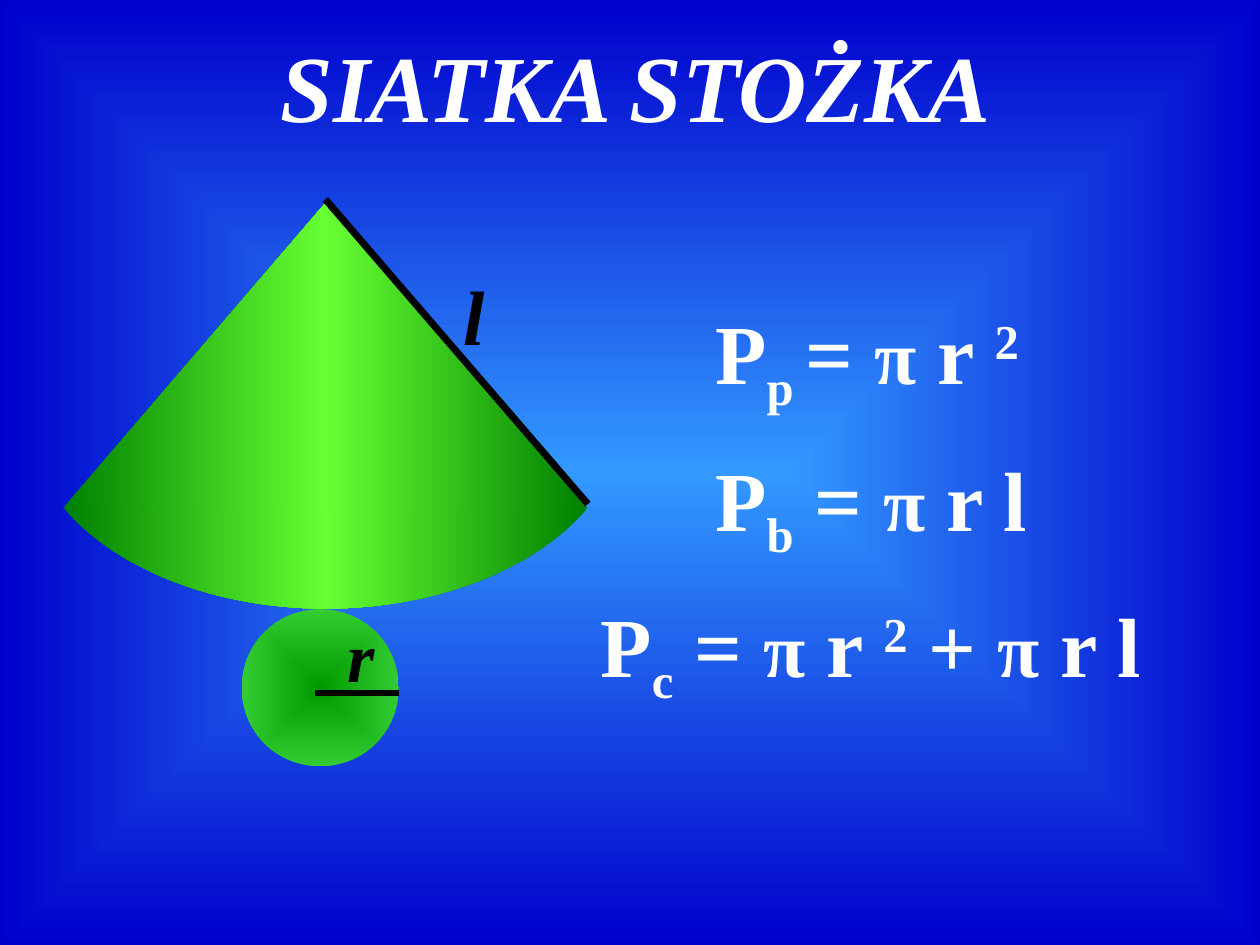
"""Build the slide with the net of a cone and its area formulas."""
import pptx
import pptx.dml.color
import pptx.enum.shapes
import pptx.enum.text
import pptx.oxml
import pptx.oxml.ns
import pptx.util

Cm, Pt = pptx.util.Cm, pptx.util.Pt
rgb = pptx.dml.color.RGBColor.from_string
MSO_SHAPE = pptx.enum.shapes.MSO_SHAPE
LINEAR = '<a:lin ang="0" scaled="1"/>'
CENTRED = '<a:path path="shape"><a:fillToRect l="50000" t="50000" r="50000" b="50000"/></a:path>'
CONE = [(0, "008000"), (50, "66FF33"), (100, "008000")]


def set_gradient(fill, element, stops, direction):
    """Give a fill the colour stops and the direction."""
    fill.gradient()
    old = element.find(".//" + pptx.oxml.ns.qn("a:gradFill"))
    gs = "".join(f'<a:gs pos="{pos * 1000}"><a:srgbClr val="{c}"/></a:gs>' for pos, c in stops)
    new = pptx.oxml.parse_xml(
        f'<a:gradFill {pptx.oxml.ns.nsdecls("a")} rotWithShape="1">'
        f"<a:gsLst>{gs}</a:gsLst>{direction}</a:gradFill>")
    old.getparent().replace(old, new)


def write_runs(sp, runs, color, italic, wrap=True):
    """Write (text, size, baseline percent) runs into a shape."""
    tf = sp.text_frame
    tf.word_wrap = wrap
    tf.auto_size = pptx.enum.text.MSO_AUTO_SIZE.SHAPE_TO_FIT_TEXT
    tf.vertical_anchor = pptx.enum.text.MSO_ANCHOR.TOP
    p = tf.paragraphs[0]
    p.alignment = pptx.enum.text.PP_ALIGN.LEFT
    for text, size, baseline in runs:
        r = p.add_run()
        r.text = text
        r.font.name = "Times New Roman"
        r.font.size = Pt(size)
        r.font.bold = True
        r.font.italic = italic
        r.font.color.rgb = rgb(color)
        if baseline:
            r.font._element.set("baseline", str(baseline * 1000))


prs = pptx.Presentation()
prs.slide_width, prs.slide_height = Cm(25.4), Cm(19.05)
s = prs.slides.add_slide(prs.slide_layouts[5])
set_gradient(s.background.fill, s.element, [(0, "3399FF"), (100, "0000CC")], CENTRED)

title = s.shapes.title
title.left, title.top, title.width, title.height = Cm(5.4), Cm(0.43), Cm(15.56), Cm(2.54)
write_runs(title, [("SIATKA STOŻKA", 54, 0)], "FFFFFF", True)
title.text_frame.paragraphs[0].space_before = Pt(6)
title.text_frame.paragraphs[0].line_spacing = 1.0

base = s.shapes.add_shape(MSO_SHAPE.OVAL, Cm(4.87), Cm(12.28), Cm(3.17), Cm(3.17))
set_gradient(base.fill, base.element, [(0, "009900"), (100, "33CC33")], CENTRED)

curves = [
    [(8.61, 8.97), (8.18, 9.45), (7.39, 9.75), (6.56, 9.75)],
    [(6.56, 9.75), (5.73, 9.75), (4.94, 9.45), (4.51, 8.97)],
    [(1.3, 10.26), (2.39, 11.51), (4.39, 12.27), (6.56, 12.27)],
    [(6.56, 12.27), (8.73, 12.27), (10.74, 11.51), (11.83, 10.26)],
]
steps = 24
points = []
for curve in curves:
    for i in range(steps + 1):
        t = i / steps
        weights = [(1 - t) ** 3, 3 * t * (1 - t) ** 2, 3 * t ** 2 * (1 - t), t ** 3]
        points.append(tuple(Cm(sum(w * pt[axis] for w, pt in zip(weights, curve)))
                            for axis in (0, 1)))
builder = s.shapes.build_freeform(*points[0])
builder.add_line_segments(points[1:], close=True)
sector = builder.convert_to_shape()

side = s.shapes.add_shape(MSO_SHAPE.ISOSCELES_TRIANGLE, Cm(1.27), Cm(4.02), Cm(10.58), Cm(6.23))
side.adjustments[0] = 0.506
for sp in (sector, side):
    set_gradient(sp.fill, sp.element, CONE, LINEAR)
for sp in (base, sector, side):
    sp.line.fill.background()
    sp.shadow.inherit = False

for x1, y1, x2, y2, width in [(6.56, 4.02, 11.85, 10.16, 4), (6.35, 13.97, 8.04, 13.97, 3.75)]:
    line = s.shapes.add_connector(pptx.enum.shapes.MSO_CONNECTOR.STRAIGHT,
                                  Cm(x1), Cm(y1), Cm(x2), Cm(y2))
    line.line.color.rgb = rgb("000000")
    line.line.width = Pt(width)
    line.element.spPr.append(
        pptx.oxml.parse_xml(f'<a:effectLst {pptx.oxml.ns.nsdecls("a")}/>'))

for text, size, x, y, w, h in [("r", 40, 6.76, 12.22, 1.07, 1.96), ("l", 44, 9.09, 5.28, 0.94, 2.13)]:
    label = s.shapes.add_textbox(Cm(x), Cm(y), Cm(w), Cm(h))
    write_runs(label, [(text, size, 0)], "000000", True, wrap=False)

pi = ("π", 44, 0)
square = ("2", 48, 30)
formulas = [
    (14.17, 7.62, [("p ", 48, -25), ("= ", 48, 0), pi, (" r ", 48, 0), square]),
    (14.17, 7.42, [("b", 48, -25), (" = ", 48, 0), pi, (" r l", 48, 0)]),
    (11.86, 12.27, [("c", 48, -25), (" = ", 48, 0), pi, (" r ", 48, 0), square,
                    (" + ", 48, 0), pi, (" r l", 48, 0)]),
]
for i, (x, w, runs) in enumerate(formulas):
    formula = s.shapes.add_textbox(Cm(x), Cm(5.93 + 2.96 * i), Cm(w), Cm(2.29))
    write_runs(formula, [("P", 48, 0)] + runs, "FFFFFF", False)

prs.save("out.pptx")
